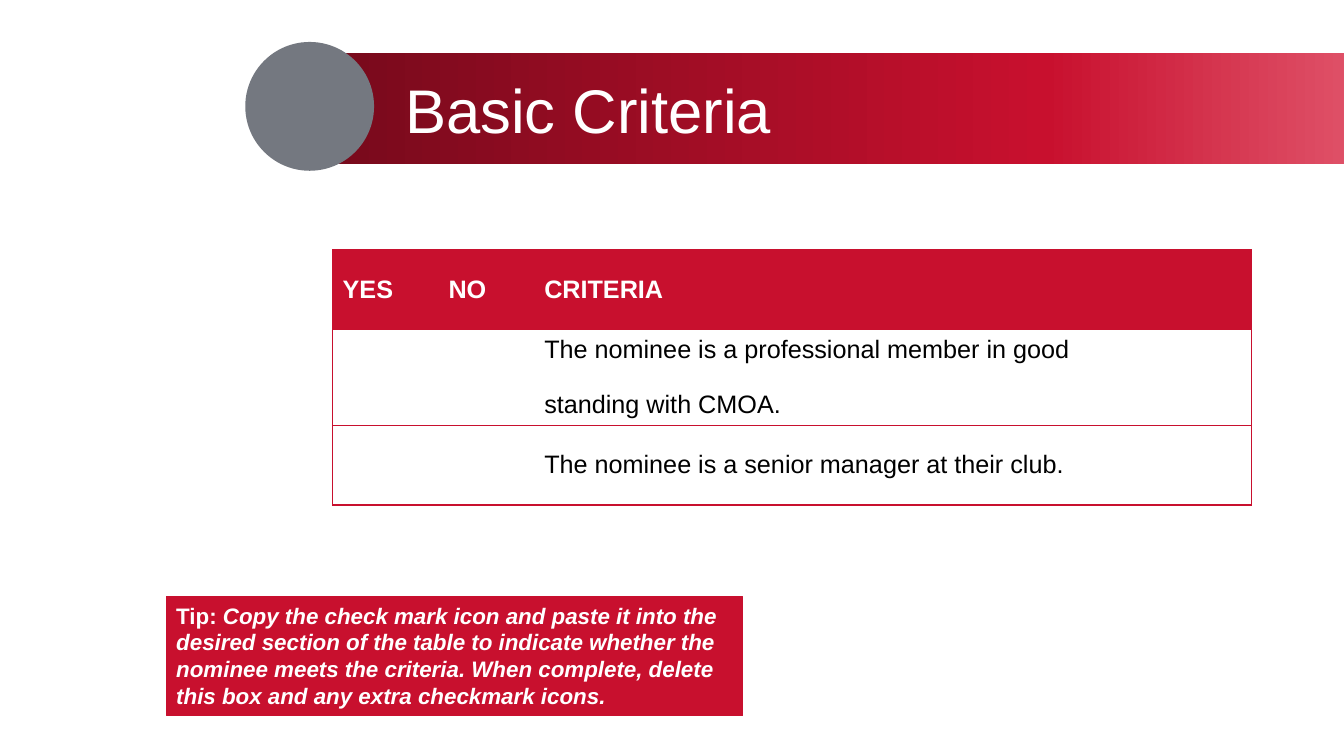
from copy import deepcopy

from lxml import etree
from pptx import Presentation
from pptx.dml.color import RGBColor
from pptx.enum import shapes, text
from pptx.oxml import ns
from pptx.util import Pt

RED = RGBColor(0xC8, 0x10, 0x2E)
DARK_RED = RGBColor(0x78, 0x0A, 0x1C)
PINK = RGBColor(0xF6, 0x92, 0xA2)
GRAY = RGBColor(0x74, 0x78, 0x80)
WHITE = RGBColor(0xFF, 0xFF, 0xFF)
BLACK = RGBColor(0x00, 0x00, 0x00)
FONT = "Arial"
NO_GRID_STYLE = "{2D5ABB26-0587-4C30-8999-92F81FD0307C}"

TITLE = "Basic Criteria"
BANNER_STOPS = [(0, DARK_RED), (0.54, RED), (1, PINK)]
CRITERIA = [
    (["YES"], ["NO"], ["CRITERIA"]),
    ([], [], ["The nominee is a professional member in good", "standing with CMOA."]),
    ([], [], ["The nominee is a senior manager at their club."]),
]
COLUMN_WIDTHS = [75.6, 68.4, 512.6]
ROW_HEIGHTS = [57, 68.2, 57]
LINE_GAP = 19.3
TIP = [
    ("Tip: ", False),
    ("Copy the check mark icon and paste it into the desired section of the table "
     "to indicate whether the nominee meets the criteria. When complete, delete "
     "this box and any extra checkmark icons.", True),
]


def add_plain_shape(slide, kind, left, top, width, height):
    shape = slide.shapes.add_shape(kind, Pt(left), Pt(top), Pt(width), Pt(height))
    shape.shadow.inherit = False
    shape.line.fill.background()
    return shape


def set_font(font, size, color, bold=False):
    font.name = FONT
    font.size = Pt(size)
    font.bold = bold
    font.color.rgb = color


def add_banner(slide):
    banner = add_plain_shape(slide, shapes.MSO_SHAPE.RECTANGLE, 238.3, 37.8, 940.3, 79.2)
    banner.fill.gradient()
    banner.fill.gradient_angle = 0
    stop_list = banner._element.spPr.find(".//" + ns.qn("a:gsLst"))
    stop_list.append(deepcopy(stop_list[0]))
    for stop, (position, color) in zip(banner.fill.gradient_stops, BANNER_STOPS):
        stop.position = position
        stop.color.rgb = color
    circle = add_plain_shape(slide, shapes.MSO_SHAPE.OVAL, 175.2, 30, 92, 92)
    circle.fill.solid()
    circle.fill.fore_color.rgb = GRAY


def add_title(slide):
    title = slide.shapes.title
    title.left, title.top, title.width, title.height = Pt(282.2), Pt(28.8), Pt(612), Pt(104.4)
    title.text_frame.text = TITLE
    title.text_frame.vertical_anchor = text.MSO_ANCHOR.MIDDLE
    paragraph = title.text_frame.paragraphs[0]
    paragraph.alignment = text.PP_ALIGN.LEFT
    paragraph.line_spacing = 0.9
    set_font(paragraph.font, 44, WHITE)
    slide.shapes._spTree.append(title._element)


def add_border(cell, side):
    line = etree.SubElement(cell._tc.get_or_add_tcPr(), ns.qn("a:ln" + side), w=str(Pt(1)))
    fill = etree.SubElement(line, ns.qn("a:solidFill"))
    etree.SubElement(fill, ns.qn("a:srgbClr"), val=str(RED))


def add_criteria_table(slide):
    frame = slide.shapes.add_table(
        len(CRITERIA), len(COLUMN_WIDTHS), Pt(237.6), Pt(178.6),
        Pt(sum(COLUMN_WIDTHS)), Pt(sum(ROW_HEIGHTS)))
    table = frame.table
    table.horz_banding = False
    table._tbl.tblPr.find(ns.qn("a:tableStyleId")).text = NO_GRID_STYLE
    for column, width in zip(table.columns, COLUMN_WIDTHS):
        column.width = Pt(width)
    last = len(COLUMN_WIDTHS) - 1
    for row_index, (row, height) in enumerate(zip(CRITERIA, ROW_HEIGHTS)):
        table.rows[row_index].height = Pt(height)
        header = row_index == 0
        for column_index, lines in enumerate(row):
            cell = table.cell(row_index, column_index)
            outer = ("L" if column_index == 0 else "") + ("R" if column_index == last else "")
            for side in outer + "TB":
                add_border(cell, side)
            if header:
                cell.fill.solid()
                cell.fill.fore_color.rgb = RED
            else:
                cell.fill.background()
            cell.vertical_anchor = text.MSO_ANCHOR.MIDDLE
            cell.text_frame.text = "\n".join(lines)
            for index, paragraph in enumerate(cell.text_frame.paragraphs):
                set_font(paragraph.font, 18, WHITE if header else BLACK, header)
                if index:
                    paragraph.space_before = Pt(LINE_GAP)


def add_tip(slide):
    tip = add_plain_shape(slide, shapes.MSO_SHAPE.RECTANGLE, 118.8, 426.2, 411.8, 85)
    tip.fill.solid()
    tip.fill.fore_color.rgb = RED
    tip.line.color.rgb = RED
    tip.line.width = Pt(0.75)
    tip.text_frame.word_wrap = True
    tip.text_frame.auto_size = text.MSO_AUTO_SIZE.SHAPE_TO_FIT_TEXT
    tip.text_frame.vertical_anchor = text.MSO_ANCHOR.TOP
    paragraph = tip.text_frame.paragraphs[0]
    paragraph.alignment = text.PP_ALIGN.LEFT
    set_font(paragraph.font, 16, WHITE, True)
    for words, italic in TIP:
        run = paragraph.add_run()
        run.text = words
        run.font.italic = italic


def main():
    presentation = Presentation()
    presentation.slide_width, presentation.slide_height = Pt(960), Pt(540)
    slide = presentation.slides.add_slide(presentation.slide_layouts[5])
    add_banner(slide)
    add_title(slide)
    add_criteria_table(slide)
    add_tip(slide)
    presentation.save("out.pptx")


if __name__ == "__main__":
    main()
